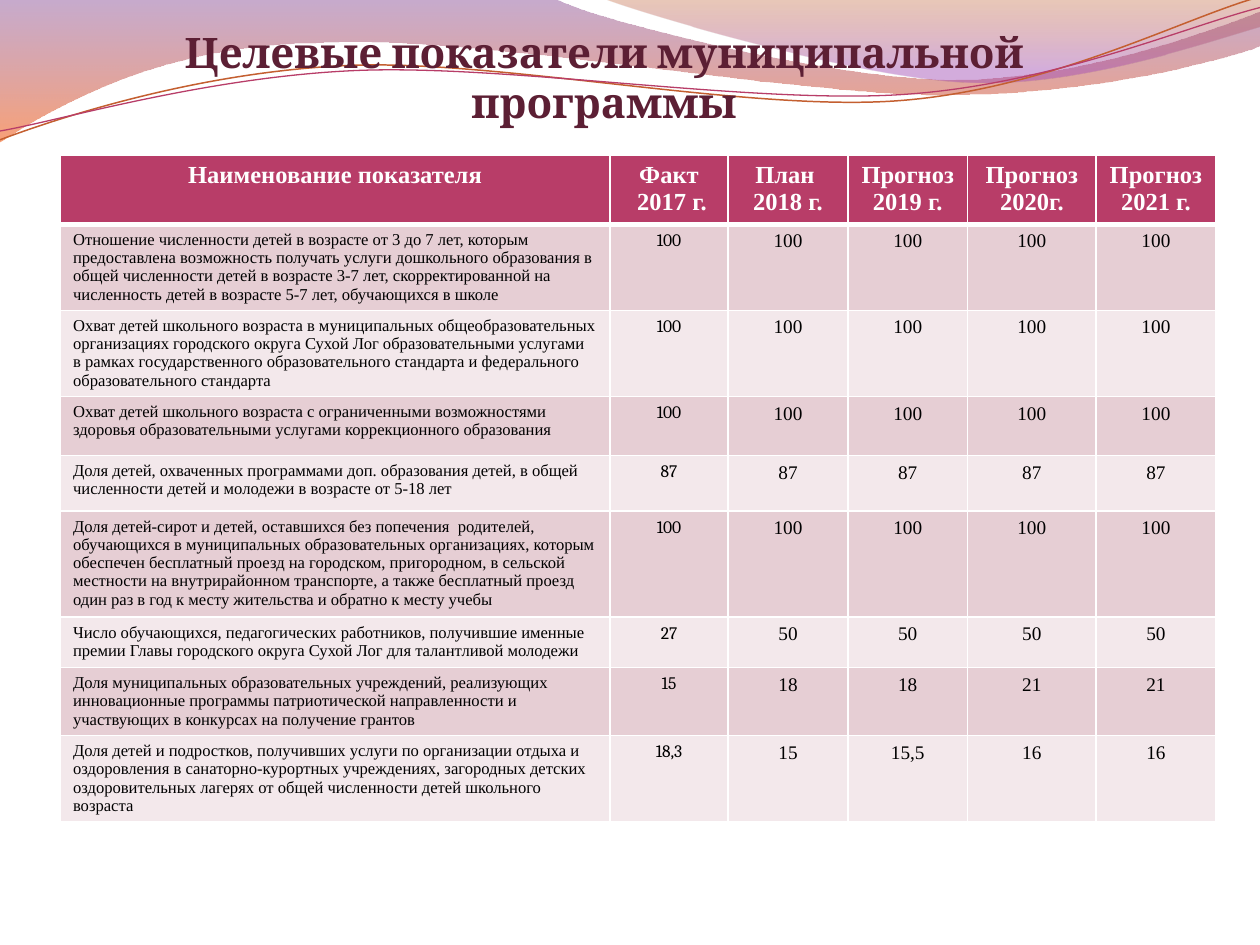
from dataclasses import dataclass

from lxml import etree
from pptx import Presentation, util as u
from pptx.dml import color as col
from pptx.enum import text as tx
from pptx.oxml import ns

HUES = {
    "white": "FFFFFF", "black": "000000", "plum": "5C1F34", "rose": "B83D68",
    "dark": "E6CED4", "light": "F3E8EB", "rust": "C45F30", "violet": "834591",
    "orange": "F35307", "brown": "B74915", "lilac": "A14BB4",
}
SERIF, HEAD = "Times New Roman", "Cambria"


@dataclass
class Stop:
    pos: float
    hue: str
    alpha: int


@dataclass
class Wave:
    """Segments hold one point for a line, or three for a Bezier curve."""
    start: tuple
    segs: list
    stops: tuple = ()
    hue: str = ""
    width: float = 0


@dataclass
class Font:
    name: str
    size: float
    hue: str = "black"
    bold: bool = False


WAVES = [
    Wave((0, -0.01), [
        [(4.4, -0.01)],
        [(4.76, 0.17), (6.64, 0.63), (7.58, 0.63)],
        [(8.53, 0.63), (9.58, 0.26), (10, 0.09)],
        [(10.01, 0.36)],
        [(9.83, 0.44), (8.7, 0.76), (7.46, 0.75)],
        [(6.22, 0.75), (3.82, 0.28), (2.57, 0.34)],
        [(1.29, 0.35), (0.46, 0.83), (-0.01, 1.13)],
        [(0, -0.01)],
    ], stops=(Stop(0, "violet", 45), Stop(1, "orange", 55))),
    Wave((4.79, -0.01), [
        [(5.09, 0.11), (6.82, 0.62), (7.69, 0.65)],
        [(8.56, 0.69), (9.61, 0.32), (10, 0.21)],
        [(10, 0)],
        [(4.79, -0.01)],
    ], stops=(Stop(0, "brown", 30), Stop(0.8, "lilac", 45))),
    Wave((0, 1.11), [
        [(0.48, 0.93), (1.58, 0.57), (2.77, 0.52)],
        [(3.95, 0.47), (5.93, 0.89), (7.13, 0.8)],
        [(8.33, 0.71), (9.38, 0.15), (9.98, -0.02)],
    ], hue="rust", width=0.85),
    Wave((0, 1.04), [
        [(0.47, 0.96), (1.64, 0.61), (2.83, 0.56)],
        [(4.03, 0.51), (5.97, 0.83), (7.17, 0.75)],
        [(8.36, 0.67), (9.41, 0.21), (10, 0.06)],
    ], hue="rose", width=0.75),
]

COLS = [4.36, 0.94, 0.95, 0.95, 1.02, 0.95]
TALL = [0.55, 0.68, 0.68, 0.47, 0.44, 0.83, 0.4, 0.54, 0.68]
TOP = ["Наименование показателя", "Факт\n 2017 г.", "План \n2018 г.",
       "Прогноз 2019 г.", "Прогноз 2020г.", "Прогноз 2021 г."]
ROWS = [
    ("Отношение численности детей в возрасте от 3 до 7 лет, которым предоставлена "
     "возможность получать услуги дошкольного образования в общей численности детей "
     "в возрасте 3-7 лет, скорректированной на численность детей в возрасте 5-7 лет, "
     "обучающихся в школе", ["100"] * 5),
    ("Охват детей школьного возраста в муниципальных общеобразовательных организациях "
     "городского округа Сухой Лог образовательными услугами\vв рамках государственного "
     "образовательного стандарта и федерального образовательного стандарта", ["100"] * 5),
    ("Охват детей школьного возраста с ограниченными возможностями здоровья "
     "образовательными услугами коррекционного образования", ["100"] * 5),
    ("Доля детей, охваченных программами доп. образования детей, в общей численности "
     "детей и молодежи в возрасте от 5-18 лет", ["87"] * 5),
    ("Доля детей-сирот и детей, оставшихся без попечения  родителей, обучающихся в "
     "муниципальных образовательных организациях, которым обеспечен бесплатный проезд "
     "на городском, пригородном, в сельской местности на внутрирайонном транспорте, а "
     "также бесплатный проезд один раз в год к месту жительства и обратно к месту учебы",
     ["100"] * 5),
    ("Число обучающихся, педагогических работников, получившие именные премии Главы "
     "городского округа Сухой Лог для талантливой молодежи", ["27"] + ["50"] * 4),
    ("Доля муниципальных образовательных учреждений, реализующих инновационные программы "
     "патриотической направленности и участвующих в конкурсах на получение грантов",
     ["15", "18", "18", "21", "21"]),
    ("Доля детей и подростков, получивших услуги по организации отдыха и оздоровления в "
     "санаторно-курортных учреждениях, загородных детских оздоровительных лагерях от "
     "общей численности детей школьного возраста", ["18,3", "15", "15,5", "16", "16"]),
]


def rgb(hue: str) -> col.RGBColor:
    return col.RGBColor.from_string(HUES[hue])


def bend(shape, segs: list) -> None:
    """Merge each run of three straight steps into one Bezier curve."""
    steps = iter(list(shape._element.iter(ns.qn("a:lnTo"))))
    for seg in segs:
        part = [next(steps) for _ in seg]
        if len(part) == 3:
            curve = etree.Element(ns.qn("a:cubicBezTo"))
            part[0].addprevious(curve)
            for step in part:
                curve.append(step[0])
                step.getparent().remove(step)


def draw_wave(slide, wave: Wave) -> None:
    pts = [(u.Inches(x), u.Inches(y))
           for x, y in [wave.start, *(p for seg in wave.segs for p in seg)]]
    form = slide.shapes.build_freeform(*pts[0])
    form.add_line_segments(pts[1:], close=bool(wave.stops))
    shape = form.convert_to_shape()
    bend(shape, wave.segs)
    shape.shadow.inherit = False
    if not wave.stops:
        shape.fill.background()
        shape.line.color.rgb = rgb(wave.hue)
        shape.line.width = u.Pt(wave.width)
        return
    shape.line.fill.background()
    shape.fill.gradient()
    shape.fill.gradient_angle = 270
    for stop, want in zip(shape.fill.gradient_stops, wave.stops):
        stop.position = want.pos
        stop.color.rgb = rgb(want.hue)
    for clr, want in zip(shape.fill._xPr.iter(ns.qn("a:srgbClr")), wave.stops):
        etree.SubElement(clr, ns.qn("a:alpha")).set("val", str(want.alpha * 1000))


def write(frame, words: str, font: Font, mid: bool = True) -> None:
    """Write text; a newline starts a paragraph, a vertical tab a line."""
    for i, line in enumerate(words.split("\n")):
        para = frame.add_paragraph() if i else frame.paragraphs[0]
        para.alignment = tx.PP_ALIGN.CENTER if mid else tx.PP_ALIGN.LEFT
        for j, piece in enumerate(line.split("\v")):
            if j:
                para.add_line_break()
            run = para.add_run()
            run.text = piece
            run.font.name, run.font.size = font.name, u.Pt(font.size)
            run.font.bold = font.bold
            run.font.color.rgb = rgb(font.hue)


def edge(cell, top: float, base: float) -> None:
    """Give the cell white borders; top and base are widths in points."""
    prop = cell._tc.get_or_add_tcPr()
    for i, (side, wide) in enumerate(zip("LRTB", (1, 1, top, base))):
        line = etree.Element(ns.qn(f"a:ln{side}"), w=str(u.Pt(wide)))
        fill = etree.SubElement(line, ns.qn("a:solidFill"))
        etree.SubElement(fill, ns.qn("a:srgbClr")).set("val", HUES["white"])
        prop.insert(i, line)


def draw_title(slide) -> None:
    box = slide.shapes.add_textbox(u.Inches(0.58), u.Inches(0.63),
                                   u.Inches(8.43), u.Inches(0.38))
    frame = box.text_frame
    frame.word_wrap = True
    frame.vertical_anchor = tx.MSO_ANCHOR.BOTTOM
    frame.margin_left = frame.margin_right = frame.margin_bottom = 0
    write(frame, "Целевые показатели муниципальной программы",
          Font(HEAD, 24, "plum", True))


def draw_table(slide) -> None:
    grid = slide.shapes.add_table(len(TALL), len(COLS), u.Inches(0.48), u.Inches(1.23),
                                  u.Inches(sum(COLS)), u.Inches(sum(TALL))).table
    for part, wide in zip(grid.columns, COLS):
        part.width = u.Inches(wide)
    for part, high in zip(grid.rows, TALL):
        part.height = u.Inches(high)
    fonts = [Font(SERIF, 9.5), Font(HEAD, 10)] + [Font(SERIF, 11)] * 4
    lines = [TOP] + [[name, *vals] for name, vals in ROWS]
    for r, line in enumerate(lines):
        hue = ("light", "dark")[r % 2] if r else "rose"
        for c, words in enumerate(line):
            cell = grid.cell(r, c)
            cell.margin_bottom = 0
            cell.fill.solid()
            cell.fill.fore_color.rgb = rgb(hue)
            edge(cell, 3 if r == 1 else 1, 1 if r else 3)
            font = fonts[c] if r else Font(SERIF, 14, "white", True)
            write(cell.text_frame, words, font, r == 0 or c > 0)


def main() -> None:
    deck = Presentation()
    deck.slide_width, deck.slide_height = u.Inches(10), u.Inches(7.5)
    slide = deck.slides.add_slide(deck.slide_layouts[6])
    for wave in WAVES:
        draw_wave(slide, wave)
    draw_title(slide)
    draw_table(slide)
    deck.save("out.pptx")


if __name__ == "__main__":
    main()
